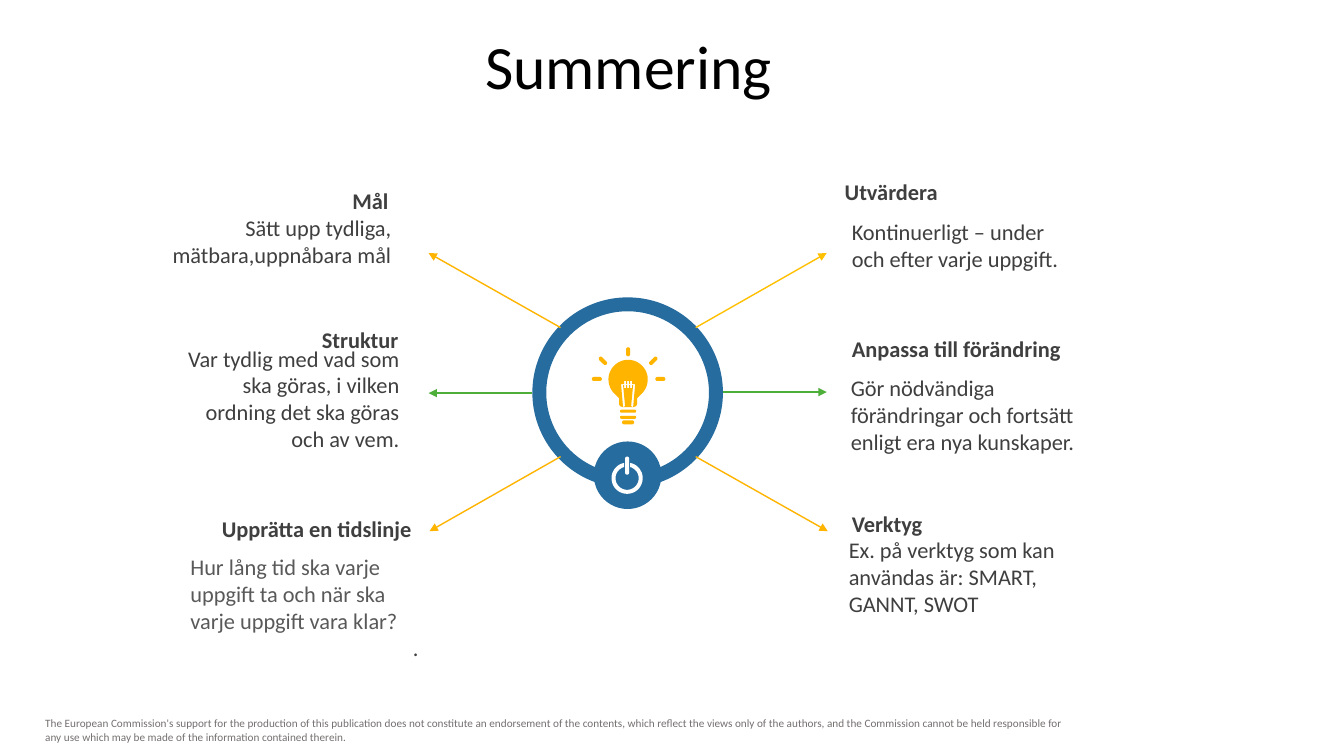
"""Builds the summary slide: six pieces of advice around a light bulb."""
import math

import pptx
import pptx.dml.color
import pptx.enum.shapes
import pptx.enum.text
import pptx.oxml
import pptx.oxml.ns
import pptx.util

Inches = pptx.util.Inches
Align = pptx.enum.text.PP_ALIGN
Anchor = pptx.enum.text.MSO_ANCHOR
Preset = pptx.enum.shapes.MSO_SHAPE

BLUE, YELLOW, AMBER, GREEN, WHITE = "266C9F", "FFB500", "FFC000", "4EAE3A", "FFFFFF"
DARK, GREY = "3F3F3F", "595959"
LEFT, RIGHT, CENTER = Align.LEFT, Align.RIGHT, Align.CENTER

TITLE = "Summering"
FOOTER = ("The European Commission's support for the production of this publication does not "
          "constitute an endorsement of the contents, which reflect the views only of the authors, "
          "and the Commission cannot be held responsible for any use which may be made of the "
          "information contained therein.")

HEADINGS = [
    ("Mål", 1.49, 1.8, RIGHT),
    ("Struktur", 1.59, 3.18, RIGHT),
    ("Upprätta en tidslinje", 1.72, 5.06, RIGHT),
    ("Utvärdera", 8.28, 1.72, LEFT),
    ("Anpassa till förändring", 8.35, 3.27, LEFT),
    ("Verktyg", 8.35, 5.01, LEFT),
]
BODIES = [
    ((1.3, 2.07, 2.68, 0.64), Anchor.MIDDLE,
     [("Sätt upp tydliga, mätbara,uppnåbara mål", RIGHT, DARK)]),
    ((1.6, 3.37, 2.46, 1.45), Anchor.TOP,
     [("Var tydlig med vad som ska göras, i vilken ordning det ska göras och av vem.", RIGHT, DARK)]),
    ((1.79, 5.43, 2.46, 1.18), Anchor.MIDDLE,
     [("Hur lång tid ska varje uppgift ta och när ska varje uppgift vara klar?", LEFT, GREY),
      (".", RIGHT, DARK)]),
    ((8.35, 2.11, 2.46, 0.64), Anchor.MIDDLE,
     [("Kontinuerligt – under och efter varje uppgift.", LEFT, DARK)]),
    ((8.34, 3.52, 2.46, 1.18), Anchor.MIDDLE,
     [("Gör nödvändiga förändringar och fortsätt enligt era nya kunskaper.", LEFT, DARK)]),
    ((8.32, 5.27, 2.46, 1.18), Anchor.TOP,
     [("Ex. på verktyg som kan användas är: SMART, GANNT, SWOT", LEFT, DARK)]),
]
ARROWS = [
    ((5.28, 3.9), (4.25, 3.9), GREEN),
    ((7.17, 3.89), (8.2, 3.89), GREEN),
    ((5.56, 3.25), (4.25, 2.51), YELLOW),
    ((6.9, 3.25), (8.2, 2.51), AMBER),
    ((6.9, 4.53), (8.21, 5.27), YELLOW),
    ((5.56, 4.53), (4.26, 5.27), YELLOW),
]

BULB_X = 6.23
RAYS = [(5.92, 3.76, 0.1, 0.04, 0), (6.55, 3.76, 0.1, 0.04, 0), (BULB_X, 3.49, 0.09, 0.04, 90),
        (5.98, 3.58, 0.1, 0.04, 45), (6.48, 3.58, 0.1, 0.04, 135)]
BASE_BARS = [(BULB_X, 4.08, 0.16, 0.03, 0), (BULB_X, 4.14, 0.16, 0.03, 0),
             (BULB_X, 4.19, 0.12, 0.04, 0)]
SOCKET_HALF = [(0.09, 3.95), (0.09, 4.01), (0.08, 4.03), (0.05, 4.04)]
FILAMENT_HALF = [(0.01, 3.78), (0.01, 3.81), (0.02, 3.81), (0.02, 3.78), (0.04, 3.78),
                 (0.04, 3.81), (0.07, 3.81), (0.05, 4.04), (0.03, 4.03), (0.05, 3.82),
                 (0.04, 3.82), (0.04, 3.85), (0.02, 3.85), (0.02, 3.82), (0.01, 3.82),
                 (0.01, 3.85)]


def color(hex_value):
    return pptx.dml.color.RGBColor.from_string(hex_value)


def apply(target, formats):
    for name, value in formats.items():
        setattr(target, name, value)


def add_text(page, place, paragraphs, size, bold=False, anchor=Anchor.MIDDLE, spacing=None):
    box = page.shapes.add_textbox(*map(Inches, place))
    frame = box.text_frame
    apply(frame, {"word_wrap": True, "vertical_anchor": anchor})
    for index, (text, align, ink) in enumerate(paragraphs):
        para = frame.add_paragraph() if index else frame.paragraphs[0]
        apply(para, {"alignment": align, "line_spacing": spacing})
        span = para.add_run()
        span.text = text
        apply(span.font, {"name": "Calibri", "size": pptx.util.Pt(size), "bold": bold})
        span.font.color.rgb = color(ink)


def paint(shape, fill):
    shape.shadow.inherit = False
    shape.fill.solid()
    shape.fill.fore_color.rgb = color(fill)
    shape.line.fill.background()


def add_arrow(page, start, end, ink):
    arrow = page.shapes.add_connector(pptx.enum.shapes.MSO_CONNECTOR.STRAIGHT,
                                      *map(Inches, start + end))
    arrow.line.color.rgb = color(ink)
    arrow.line.width = pptx.util.Pt(1)
    outline = arrow.line._get_or_add_ln()
    head = pptx.oxml.parse_xml(f'<a:tailEnd {pptx.oxml.ns.nsdecls("a")} type="triangle"/>')
    outline.append(head)
    effects = pptx.oxml.parse_xml(f'<a:effectLst {pptx.oxml.ns.nsdecls("a")}/>')
    arrow._element.spPr.append(effects)


def arc(x, y, radius, start, stop, steps=12):
    angles = [math.radians(start + (stop - start) * i / steps) for i in range(steps + 1)]
    return [(x + radius * math.cos(a), y + radius * math.sin(a)) for a in angles]


def capsule(x, y, length, thickness, angle):
    reach = (length - thickness) / 2
    dx, dy = reach * math.cos(math.radians(angle)), reach * math.sin(math.radians(angle))
    return (arc(x + dx, y + dy, thickness / 2, angle - 90, angle + 90)
            + arc(x - dx, y - dy, thickness / 2, angle + 90, angle + 270))


def mirrored(half):
    return ([(BULB_X + dx, y) for dx, y in half]
            + [(BULB_X - dx, y) for dx, y in reversed(half)])


def add_icon(page, contours, fill):
    units = [[(x * 1000, y * 1000) for x, y in contour] for contour in contours]
    builder = page.shapes.build_freeform(*units[0][0], scale=Inches(1) / 1000)
    for index, contour in enumerate(units):
        if index:
            builder.move_to(*contour[0])
        builder.add_line_segments(contour[1:], close=True)
    paint(builder.convert_to_shape(), fill)


def main():
    deck = pptx.Presentation()
    apply(deck, {"slide_width": Inches(13.33), "slide_height": Inches(7.5)})
    page = deck.slides.add_slide(deck.slide_layouts[6])

    add_text(page, (0.35, 7.06, 10.46, 0.37), [(FOOTER, LEFT, "757070")], 8, anchor=Anchor.TOP)
    add_text(page, (2.87, 0.31, 6.73, 0.79), [(TITLE, CENTER, "000000")], 44,
             anchor=Anchor.TOP, spacing=0.9)

    ring = page.shapes.add_shape(Preset.DONUT, *map(Inches, (5.28, 2.95, 1.89, 1.89)))
    ring.adjustments[0] = 0.073
    button = page.shapes.add_shape(Preset.OVAL, *map(Inches, (5.89, 4.38, 0.67, 0.67)))
    for shape in (ring, button):
        paint(shape, BLUE)

    glass = arc(BULB_X, 3.765, 0.195, 135, 405, 40) + mirrored(SOCKET_HALF)
    strokes = [capsule(*stroke) for stroke in RAYS + BASE_BARS]
    add_icon(page, [glass, mirrored(FILAMENT_HALF)] + strokes, YELLOW)

    power_ring = arc(6.22, 4.745, 0.155, -79, 259, 40) + arc(6.22, 4.745, 0.115, 255, -75, 40)
    add_icon(page, [power_ring, capsule(6.22, 4.62, 0.18, 0.04, 90)], WHITE)

    for start, end, ink in ARROWS:
        add_arrow(page, start, end, ink)
    for place, anchor, paragraphs in BODIES:
        add_text(page, place, paragraphs, 16, anchor=anchor)
    for text, left, top, align in HEADINGS:
        add_text(page, (left, top, 2.46, 0.37), [(text, align, DARK)], 16, bold=True)

    deck.save("out.pptx")


if __name__ == "__main__":
    main()
